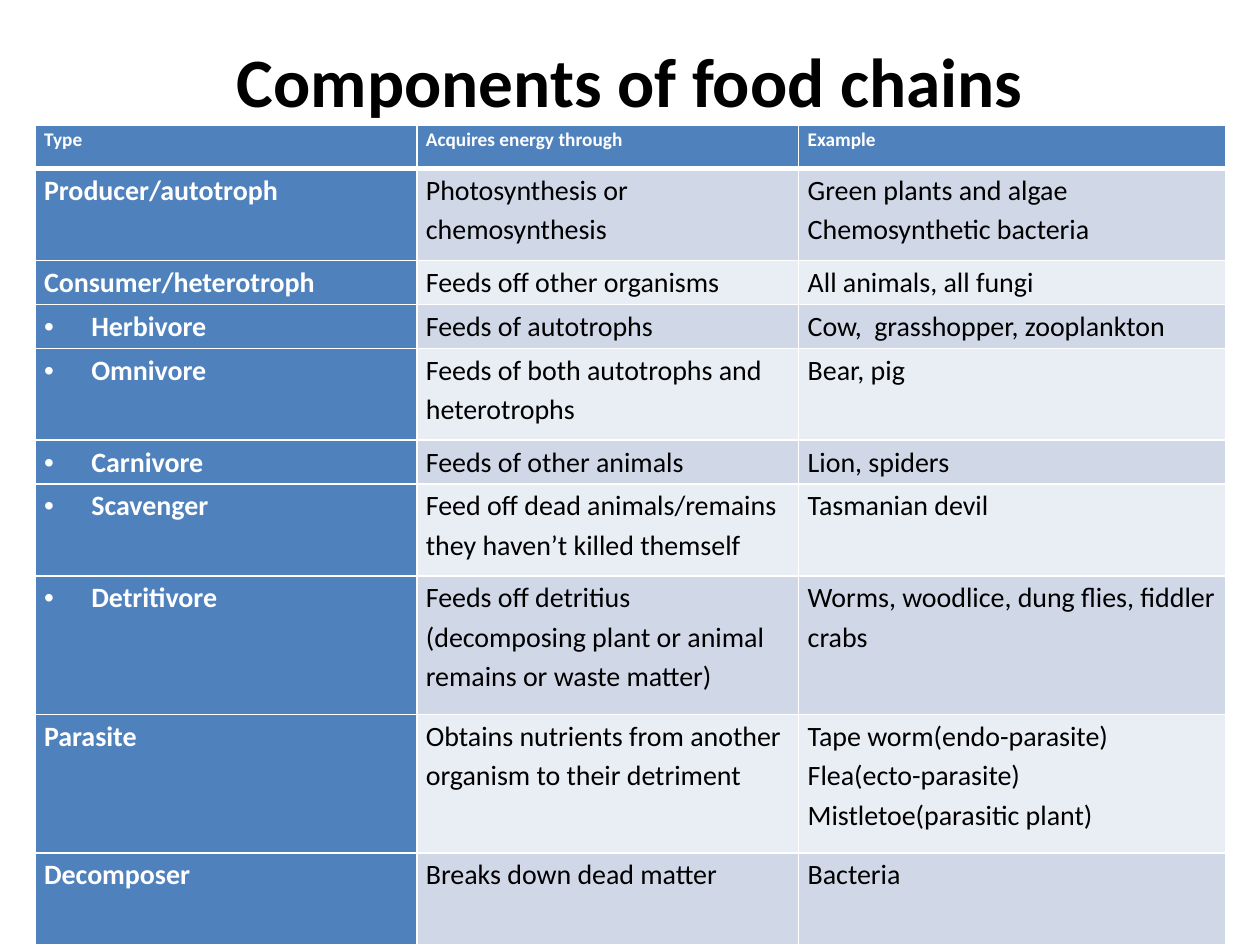
from lxml import etree
from pptx import Presentation
from pptx.dml.color import RGBColor
from pptx.enum.text import MSO_ANCHOR, PP_ALIGN
from pptx.oxml.ns import qn
from pptx.util import Pt

TOP = MSO_ANCHOR.TOP
CENTER = PP_ALIGN.CENTER
TITLE_ONLY_LAYOUT = 5

FONT = "Calibri"
BLACK, WHITE, BLUE = "000000", "FFFFFF", "4F81BD"
BANDS = ("D0D8E8", "E9EDF4")

COLUMN_WIDTHS = (218.2, 218.2, 244.1)
ROW_HEIGHTS = {1: 25.1, 2: 52.5, 3: 79.2}  # by number of text lines
BULLET_INDENT = 27

# Lines of text, then the cells; "• " marks a bulleted cell
ROWS = [
    (1, "Type", "Acquires energy through", "Example"),
    (2, "Producer/autotroph", "Photosynthesis or chemosynthesis",
     "Green plants and algae\nChemosynthetic bacteria"),
    (1, "Consumer/heterotroph", "Feeds off other organisms", "All animals, all fungi"),
    (1, "• Herbivore", "Feeds of autotrophs", "Cow,  grasshopper, zooplankton"),
    (2, "• Omnivore", "Feeds of both autotrophs and heterotrophs", "Bear, pig"),
    (1, "• Carnivore", "Feeds of other animals", "Lion, spiders"),
    (2, "• Scavenger", "Feed off dead animals/remains they haven’t killed themself",
     "Tasmanian devil"),
    (3, "• Detritivore",
     "Feeds off detritius (decomposing plant or animal remains or waste matter)",
     "Worms, woodlice, dung flies, fiddler crabs"),
    (3, "Parasite", "Obtains nutrients from another organism to their detriment",
     "Tape worm(endo-parasite)\nFlea(ecto-parasite)\nMistletoe(parasitic plant)"),
    (2, "Decomposer", "Breaks down dead matter", "Bacteria"),
]


def color(hex_string):
    return RGBColor.from_string(hex_string)


def format_runs(paragraph, size, hex_string, bold):
    for run in paragraph.runs:
        run.font.name = FONT
        run.font.size = Pt(size)
        run.font.bold = bold
        run.font.color.rgb = color(hex_string)


def add_bullet(paragraph):
    properties = paragraph._p.get_or_add_pPr()
    properties.set("marL", str(Pt(BULLET_INDENT)))
    properties.set("indent", str(-Pt(BULLET_INDENT)))
    etree.SubElement(properties, qn("a:buFont"), typeface="Arial")
    etree.SubElement(properties, qn("a:buChar"), char="•")


def set_borders(cell, widths):
    properties = cell._tc.get_or_add_tcPr()
    for side in "LRTB":
        line = etree.SubElement(properties, qn("a:ln" + side), w=str(Pt(widths.get(side, 1))))
        fill = etree.SubElement(line, qn("a:solidFill"))
        etree.SubElement(fill, qn("a:srgbClr"), val=WHITE)


def fill_cell(cell, text, row, column):
    is_heading = row == 0 or column == 0
    # A thick line parts the header from the body
    set_borders(cell, {0: {"B": 3}, 1: {"T": 3}}.get(row, {}))
    cell.fill.solid()
    cell.fill.fore_color.rgb = color(BLUE if is_heading else BANDS[(row - 1) % 2])
    cell.margin_left = cell.margin_right = Pt(5.2)
    cell.margin_top = cell.margin_bottom = 0
    cell.vertical_anchor = TOP
    cell.text_frame.text = text.removeprefix("• ")
    for paragraph in cell.text_frame.paragraphs:
        paragraph.line_spacing = 1.15
        if text.startswith("•"):
            add_bullet(paragraph)
        format_runs(paragraph, 11 if row == 0 else 16, WHITE if is_heading else BLACK, is_heading)


def place_title(slide, left, top, width, height):
    title = slide.shapes.title
    title.left, title.top, title.width, title.height = Pt(left), Pt(top), Pt(width), Pt(height)
    frame = title.text_frame
    frame.text = "Components of food chains"
    frame.vertical_anchor = TOP
    frame.margin_top = 0
    paragraph = frame.paragraphs[0]
    paragraph.alignment = CENTER
    format_runs(paragraph, 39.6, BLACK, True)


def place_table(slide, left, top):
    heights = [ROW_HEIGHTS[row[0]] for row in ROWS]
    table = slide.shapes.add_table(len(ROWS), len(COLUMN_WIDTHS), Pt(left), Pt(top),
                                   Pt(sum(COLUMN_WIDTHS)), Pt(sum(heights))).table
    for column, width in zip(table.columns, COLUMN_WIDTHS):
        column.width = Pt(width)
    for row_index, (height, (_, *texts)) in enumerate(zip(heights, ROWS)):
        table.rows[row_index].height = Pt(height)
        for column_index, text in enumerate(texts):
            fill_cell(table.cell(row_index, column_index), text, row_index, column_index)


def main():
    presentation = Presentation()
    presentation.slide_width, presentation.slide_height = Pt(720), Pt(540)
    slide = presentation.slides.add_slide(presentation.slide_layouts[TITLE_ONLY_LAYOUT])
    place_title(slide, 36, 21.6, 648, 90)
    place_table(slide, 20, 71.3)
    presentation.save("out.pptx")


if __name__ == "__main__":
    main()
